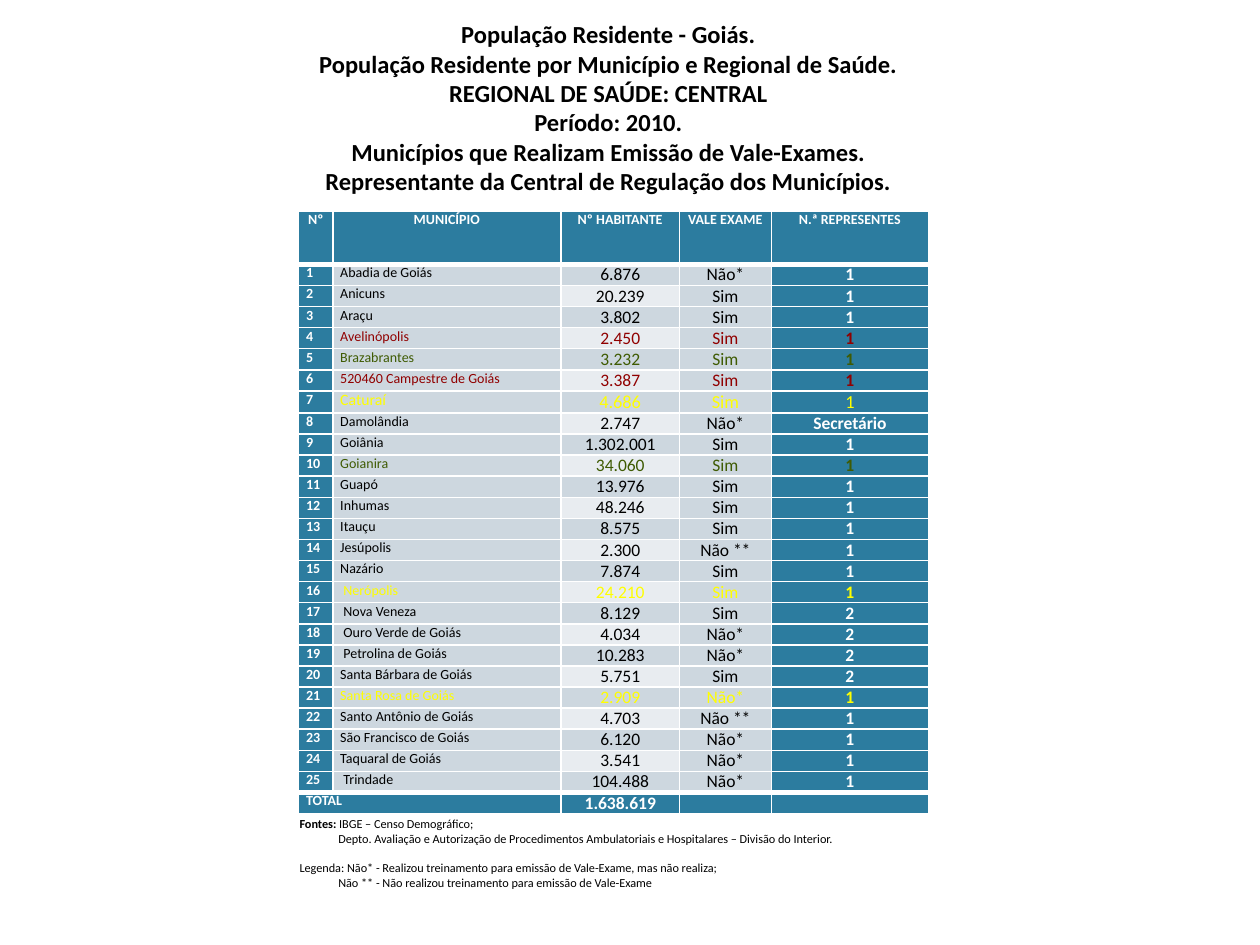
import lxml.etree
import pptx
import pptx.dml.color
import pptx.enum.text
import pptx.oxml.ns
import pptx.util

Cm = pptx.util.Cm
Pt = pptx.util.Pt
RGBColor = pptx.dml.color.RGBColor
CENTER = pptx.enum.text.PP_ALIGN.CENTER
LEFT = pptx.enum.text.PP_ALIGN.LEFT
qn = pptx.oxml.ns.qn

WHITE = RGBColor(0xFF, 0xFF, 0xFF)
BLACK = RGBColor(0x00, 0x00, 0x00)
BLUE = RGBColor(0x2C, 0x7C, 0x9F)
GREY = RGBColor(0xCD, 0xD7, 0xDF)
PALE = RGBColor(0xE8, 0xEC, 0xF0)
RED = RGBColor(0x90, 0x00, 0x00)
GREEN = RGBColor(0x3F, 0x5B, 0x03)
YELLOW = RGBColor(0xFF, 0xFF, 0x00)

TITLE_LINES = [
    "População Residente - Goiás.",
    "População Residente por Município e Regional de Saúde.",
    "REGIONAL DE SAÚDE: CENTRAL",
    "Período: 2010.",
    "Municípios que Realizam Emissão de Vale-Exames.",
    "Representante da Central de Regulação dos Municípios.",
]
HEADINGS = ["Nº", "MUNICÍPIO", "Nº HABITANTE", "VALE EXAME", "N.ª REPRESENTES"]
COLUMN_WIDTHS = [0.69, 4.6, 2.39, 1.85, 3.17]
HEADER_HEIGHT = 1.07
ROW_HEIGHT = 0.42
MUNICIPALITIES = [
    ("Abadia de Goiás", "6.876", "Não*", "1"),
    ("Anicuns", "20.239", "Sim", "1"),
    ("Araçu", "3.802", "Sim", "1"),
    ("Avelinópolis", "2.450", "Sim", "1"),
    ("Brazabrantes", "3.232", "Sim", "1"),
    ("520460 Campestre de Goiás", "3.387", "Sim", "1"),
    ("Caturaí", "4.686", "Sim", "1"),
    ("Damolândia", "2.747", "Não*", "Secretário"),
    ("Goiânia", "1.302.001", "Sim", "1"),
    ("Goianira", "34.060", "Sim", "1"),
    ("Guapó", "13.976", "Sim", "1"),
    ("Inhumas", "48.246", "Sim", "1"),
    ("Itauçu", "8.575", "Sim", "1"),
    ("Jesúpolis", "2.300", "Não **", "1"),
    ("Nazário", "7.874", "Sim", "1"),
    (" Nerópolis", "24.210", "Sim", "1"),
    (" Nova Veneza", "8.129", "Sim", "2"),
    (" Ouro Verde de Goiás", "4.034", "Não*", "2"),
    (" Petrolina de Goiás", "10.283", "Não*", "2"),
    ("Santa Bárbara de Goiás", "5.751", "Sim", "2"),
    ("Santa Rosa de Goiás", "2.909", "Não*", "1"),
    ("Santo Antônio de Goiás", "4.703", "Não **", "1"),
    ("São Francisco de Goiás", "6.120", "Não*", "1"),
    ("Taquaral de Goiás", "3.541", "Não*", "1"),
    (" Trindade", "104.488", "Não*", "1"),
]
ROW_COLORS = {4: RED, 5: GREEN, 6: RED, 7: YELLOW, 10: GREEN, 16: YELLOW, 21: YELLOW}
LARGER_ROW = 7


def write_text(paragraph, text, size=8, color=BLACK, bold=False, align=LEFT):
    paragraph.alignment = align
    run = paragraph.add_run()
    run.text = text
    run.font.name = "Calibri"
    run.font.size = Pt(size)
    run.font.bold = bold
    run.font.color.rgb = color


def add_frame(slide, left, top, width, height):
    frame = slide.shapes.add_textbox(Cm(left), Cm(top), Cm(width), Cm(height)).text_frame
    frame.word_wrap = True
    return frame


def add_title(slide, left, top, width, height):
    frame = add_frame(slide, left, top, width, height)
    frame.vertical_anchor = pptx.enum.text.MSO_ANCHOR.BOTTOM
    paragraph = frame.paragraphs[0]
    for index, line in enumerate(TITLE_LINES):
        if index:
            paragraph.add_line_break()
        write_text(paragraph, line, size=14, bold=True, align=CENTER)


def set_borders(cell, top, bottom):
    properties = cell._tc.get_or_add_tcPr()
    for side, width in (("lnL", 1), ("lnR", 1), ("lnT", top), ("lnB", bottom)):
        line = lxml.etree.SubElement(properties, qn("a:" + side), w=str(Pt(width)))
        fill = lxml.etree.SubElement(line, qn("a:solidFill"))
        lxml.etree.SubElement(fill, qn("a:srgbClr"), val=str(WHITE))


def fill_cell(cell, text, fill, top=1, bottom=1, **text_format):
    cell.margin_left = cell.margin_right = Cm(0.15)
    cell.margin_top = cell.margin_bottom = 0
    set_borders(cell, top, bottom)
    cell.fill.solid()
    cell.fill.fore_color.rgb = fill
    paragraph = cell.text_frame.paragraphs[0]
    if text:
        write_text(paragraph, text, **text_format)
    else:
        lxml.etree.SubElement(paragraph._p, qn("a:endParaRPr"), sz="800")


def fill_municipality(table, number, values):
    name, inhabitants, voucher, representatives = values
    larger = number == LARGER_ROW
    color = ROW_COLORS.get(number, BLACK)
    figure = {"size": 10.5 if larger else 10, "align": CENTER}
    edges = {"top": 3 if number == 1 else 1,
             "bottom": 3 if number == len(MUNICIPALITIES) else 1}
    stripe = GREY if number % 2 else PALE
    cells = table.rows[number].cells
    fill_cell(cells[0], str(number), BLUE, color=WHITE, bold=True, **edges)
    fill_cell(cells[1], name, GREY, size=9 if larger else 8, color=color, **edges)
    fill_cell(cells[2], inhabitants, stripe, color=color, **figure, **edges)
    fill_cell(cells[3], voucher, GREY, color=color, **figure, **edges)
    fill_cell(cells[4], representatives, BLUE, color=ROW_COLORS.get(number, WHITE),
              bold=not larger, **figure, **edges)


def add_population_table(slide, left, top):
    row_count = len(MUNICIPALITIES) + 2
    height = HEADER_HEIGHT + ROW_HEIGHT * (row_count - 1)
    table = slide.shapes.add_table(row_count, len(HEADINGS), Cm(left), Cm(top),
                                   Cm(sum(COLUMN_WIDTHS)), Cm(height)).table
    table.horz_banding = False
    for column, width in zip(table.columns, COLUMN_WIDTHS):
        column.width = Cm(width)
    for index, row in enumerate(table.rows):
        row.height = Cm(ROW_HEIGHT if index else HEADER_HEIGHT)
    for cell, heading in zip(table.rows[0].cells, HEADINGS):
        fill_cell(cell, heading, BLUE, bottom=3, color=WHITE, bold=True, align=CENTER)
    for number, values in enumerate(MUNICIPALITIES, start=1):
        fill_municipality(table, number, values)
    totals = list(table.rows[row_count - 1].cells)
    for index, text in enumerate(["TOTAL", "", "1.638.619", "", ""]):
        fill_cell(totals[index], text, BLUE, top=3, color=WHITE, bold=True,
                  size=10 if index else 8, align=CENTER if index else LEFT)
    totals[0].merge(totals[1])


def add_sources(slide, left, top, width, height):
    frame = add_frame(slide, left, top, width, height)
    source = frame.paragraphs[0]
    write_text(source, "Fontes: ", size=7, bold=True)
    write_text(source, "IBGE – Censo Demográfico;", size=7)
    notes = [
        ("Depto. Avaliação e Autorização de Procedimentos Ambulatoriais e Hospitalares"
         " – Divisão do Interior.", 0.78, 0),
        ("Legenda: Não* - Realizou treinamento para emissão de Vale-Exame, mas não realiza;",
         0, 8.5),
        ("Não ** - Não realizou treinamento para emissão de Vale-Exame", 0.78, 0),
    ]
    for text, indent, space_before in notes:
        paragraph = frame.add_paragraph()
        write_text(paragraph, text, size=7)
        paragraph.space_before = Pt(space_before)
        paragraph._p.get_or_add_pPr().set("marL", str(Cm(indent)))


def main():
    presentation = pptx.Presentation()
    presentation.slide_width = Cm(25.4)
    presentation.slide_height = Cm(19.05)
    slide = presentation.slides.add_slide(presentation.slide_layouts[6])
    add_title(slide, 1.09, 0.36, 22.35, 3.71)
    add_population_table(slide, 6.02, 4.26)
    add_sources(slide, 5.79, 16.33, 14.53, 1.75)
    presentation.save("out.pptx")


if __name__ == "__main__":
    main()
